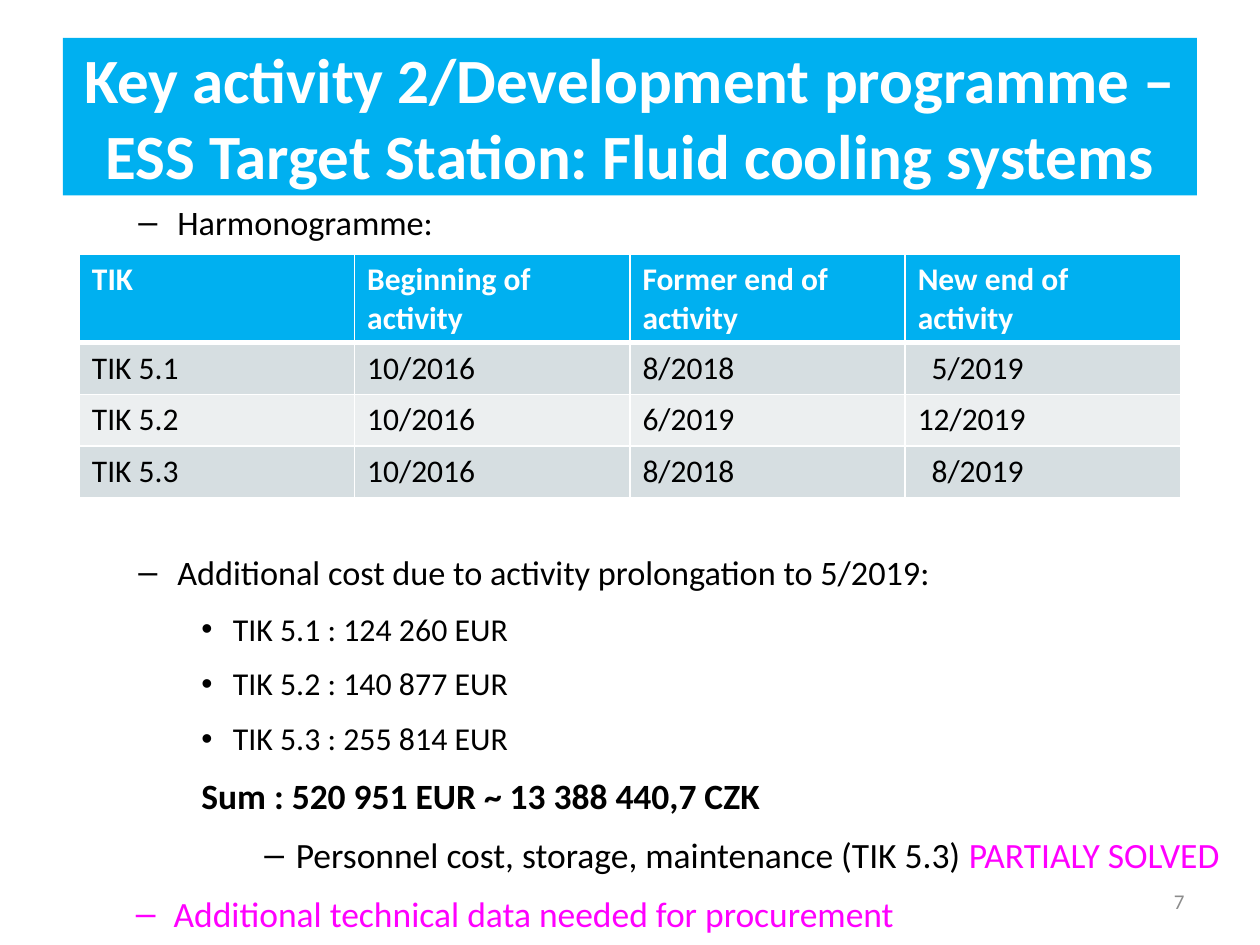
from lxml.etree import SubElement
from pptx import Presentation
from pptx.dml.color import RGBColor
from pptx.enum.shapes import MSO_SHAPE
from pptx.enum.text import MSO_ANCHOR, PP_ALIGN
from pptx.oxml.ns import qn
from pptx.util import Inches, Pt

FONT = "Calibri"
COLORS = {
    "accent": "00B0F0", "white": "FFFFFF", "black": "000000", "status": "FF00FF",
    "number": "8C8C8C", "band_dark": "D6DEE1", "band_light": "ECEFF0",
}
HEADERS = ["TIK", "Beginning of activity", "Former end of activity", "New end of activity"]
SCHEDULE = [
    ["TIK 5.1", "10/2016", "8/2018", "5/2019"],
    ["TIK 5.2", "10/2016", "6/2019", "12/2019"],
    ["TIK 5.3", "10/2016", "8/2018", "8/2019"],
]
COSTS = ["TIK 5.1 : 124\u00a0260 EUR", "TIK 5.2 : 140 877 EUR", "TIK 5.3 : 255 814 EUR"]
TABLE_GAP = 170.5  # points left free for the table between two body lines


def color(name):
    return RGBColor.from_string(COLORS[name])


def set_font(paragraph, size, color_name="black", bold=False):
    font = paragraph.font
    font.name, font.size, font.bold = FONT, Pt(size), bold
    font.color.rgb = color(color_name)


def add_title(slide, left, top, width, height):
    shape = slide.shapes.add_shape(
        MSO_SHAPE.RECTANGLE, Inches(left), Inches(top), Inches(width), Inches(height))
    shape.shadow.inherit = False
    shape.fill.solid()
    shape.fill.fore_color.rgb = color("accent")
    shape.line.fill.background()
    frame = shape.text_frame
    frame.word_wrap = True
    frame.vertical_anchor = MSO_ANCHOR.MIDDLE
    paragraph = frame.paragraphs[0]
    paragraph.text = "Key activity 2/Development programme – ESS Target Station: Fluid cooling systems"
    paragraph.alignment = PP_ALIGN.CENTER
    set_font(paragraph, 36, "white", True)


def add_text_frame(slide, left, top, width, height):
    box = slide.shapes.add_textbox(Inches(left), Inches(top), Inches(width), Inches(height))
    box.text_frame.word_wrap = True
    return box.text_frame


def set_bullet(paragraph, margin, hanging, bullet):
    properties = paragraph._p.get_or_add_pPr()
    properties.set("marL", str(Inches(margin)))
    properties.set("indent", str(-Inches(hanging)))
    if bullet:
        SubElement(properties, qn("a:buFont"), typeface="Arial")
        SubElement(properties, qn("a:buChar"), char=bullet)
    else:
        SubElement(properties, qn("a:buNone"))


def add_body(slide, left, top, width, height):
    frame = add_text_frame(slide, left, top, width, height)

    def add_line(text, size, margin, hanging, bullet, before=3.5, color_name="black", bold=False):
        first = not frame.paragraphs[0].runs
        paragraph = frame.paragraphs[0] if first else frame.add_paragraph()
        paragraph.add_run().text = text
        paragraph.space_before, paragraph.space_after = Pt(before), Pt(6)
        set_bullet(paragraph, margin, hanging, bullet)
        set_font(paragraph, size, color_name, bold)
        return paragraph

    add_line("Harmonogramme:", 19.6, 0.81, 0.31, "–", before=0)
    add_line("Additional cost due to activity prolongation to 5/2019:",
             19.6, 0.81, 0.31, "–", before=TABLE_GAP)
    for cost in COSTS:
        add_line(cost, 18.2, 1.25, 0.25, "•")
    add_line("Sum : 520 951 EUR ~ 13 388 440,7 CZK", 20.3, 1, 0, None, bold=True)
    personnel = add_line("Personnel cost, storage, maintenance (TIK 5.3) ", 20.3, 1.75, 0.25, "–")
    status = personnel.add_run()
    status.text = "PARTIALY SOLVED"
    status.font.color.rgb = color("status")
    add_line("Additional technical data needed for procurement",
             20.3, 0.78, 0.3, "–", color_name="status")


def set_borders(cell, widths):
    properties = cell._tc.get_or_add_tcPr()
    for side, width in widths.items():
        line = SubElement(properties, qn(f"a:ln{side}"), w=str(Pt(width)))
        fill = SubElement(line, qn("a:solidFill"))
        SubElement(fill, qn("a:srgbClr"), val=COLORS["white"])


def add_schedule(slide, left, top, width, header_height, row_height):
    rows = [HEADERS] + SCHEDULE
    height = header_height + row_height * len(SCHEDULE)
    table = slide.shapes.add_table(
        len(rows), len(HEADERS), Inches(left), Inches(top), Inches(width), Inches(height)).table
    table.horz_banding = False
    for column in table.columns:
        column.width = Inches(width / len(HEADERS))
    for row_index, texts in enumerate(rows):
        header = row_index == 0
        table.rows[row_index].height = Inches(header_height if header else row_height)
        band = "accent" if header else ("band_dark" if row_index % 2 else "band_light")
        for column_index, text in enumerate(texts):
            cell = table.cell(row_index, column_index)
            set_borders(cell, {"L": 1, "R": 1, "T": 3 if row_index == 1 else 1,
                               "B": 3 if header else 1})
            cell.fill.solid()
            cell.fill.fore_color.rgb = color(band)
            # One-digit months in the last column line up with two-digit ones
            short_month = column_index == 3 and text[1] == "/"
            cell.margin_left = Inches(0.21 if short_month else 0.1)
            paragraph = cell.text_frame.paragraphs[0]
            paragraph.text = text
            set_font(paragraph, 18, "white" if header else "black", header)


def add_slide_number(slide, left, top, width, height):
    frame = add_text_frame(slide, left, top, width, height)
    frame.vertical_anchor = MSO_ANCHOR.MIDDLE
    paragraph = frame.paragraphs[0]
    paragraph.text = "7"
    paragraph.alignment = PP_ALIGN.RIGHT
    set_font(paragraph, 12, "number")


def main():
    presentation = Presentation()
    presentation.slide_width, presentation.slide_height = Inches(10), Inches(7.5)
    slide = presentation.slides.add_slide(presentation.slide_layouts[6])
    add_title(slide, 0.5, 0.3, 9, 1.25)
    add_body(slide, 0.5, 1.55, 9.3, 5.74)
    add_slide_number(slide, 7.17, 6.95, 2.33, 0.4)
    add_schedule(slide, 0.63, 2.02, 8.74, 0.7, 0.41)
    presentation.save("out.pptx")


if __name__ == "__main__":
    main()
